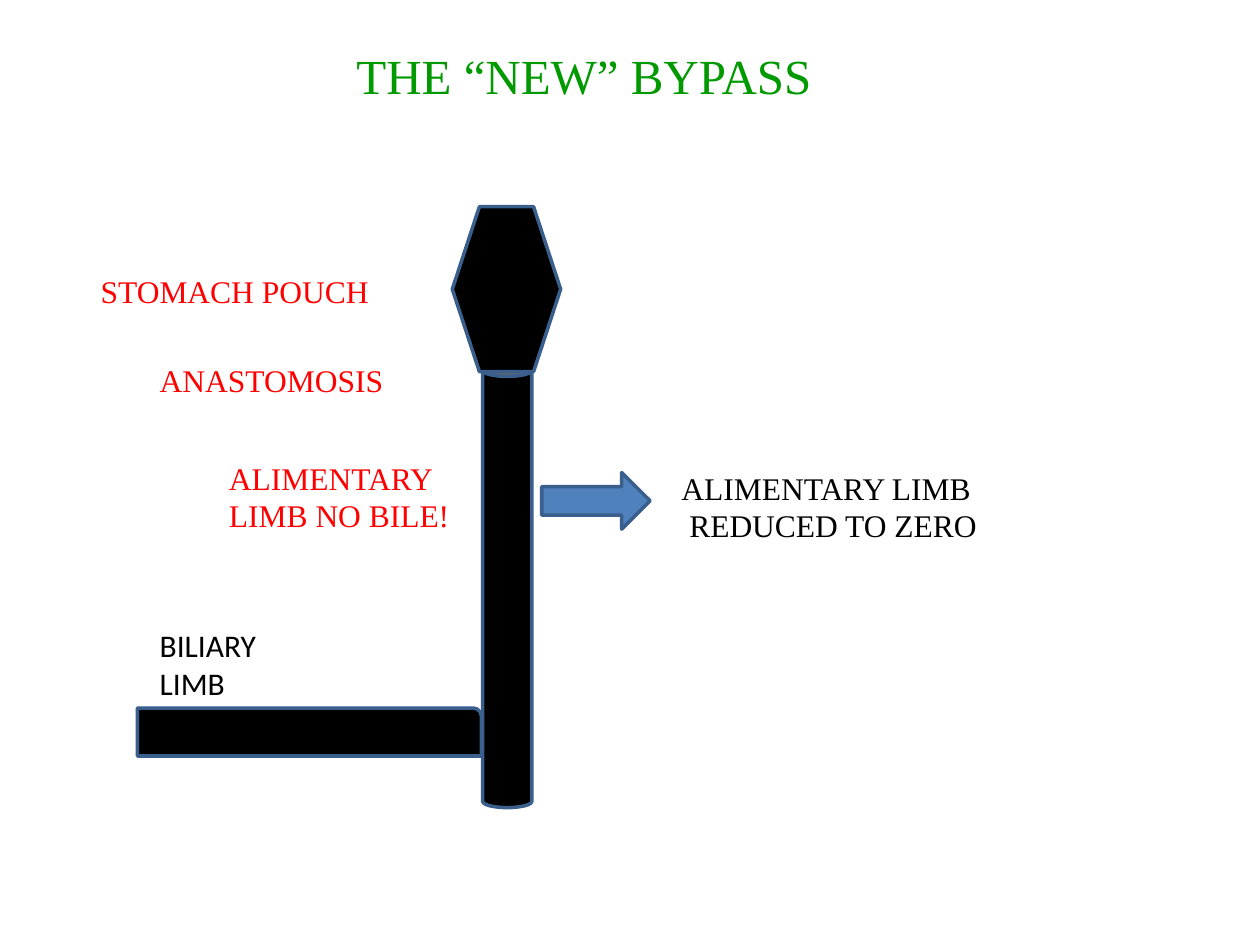
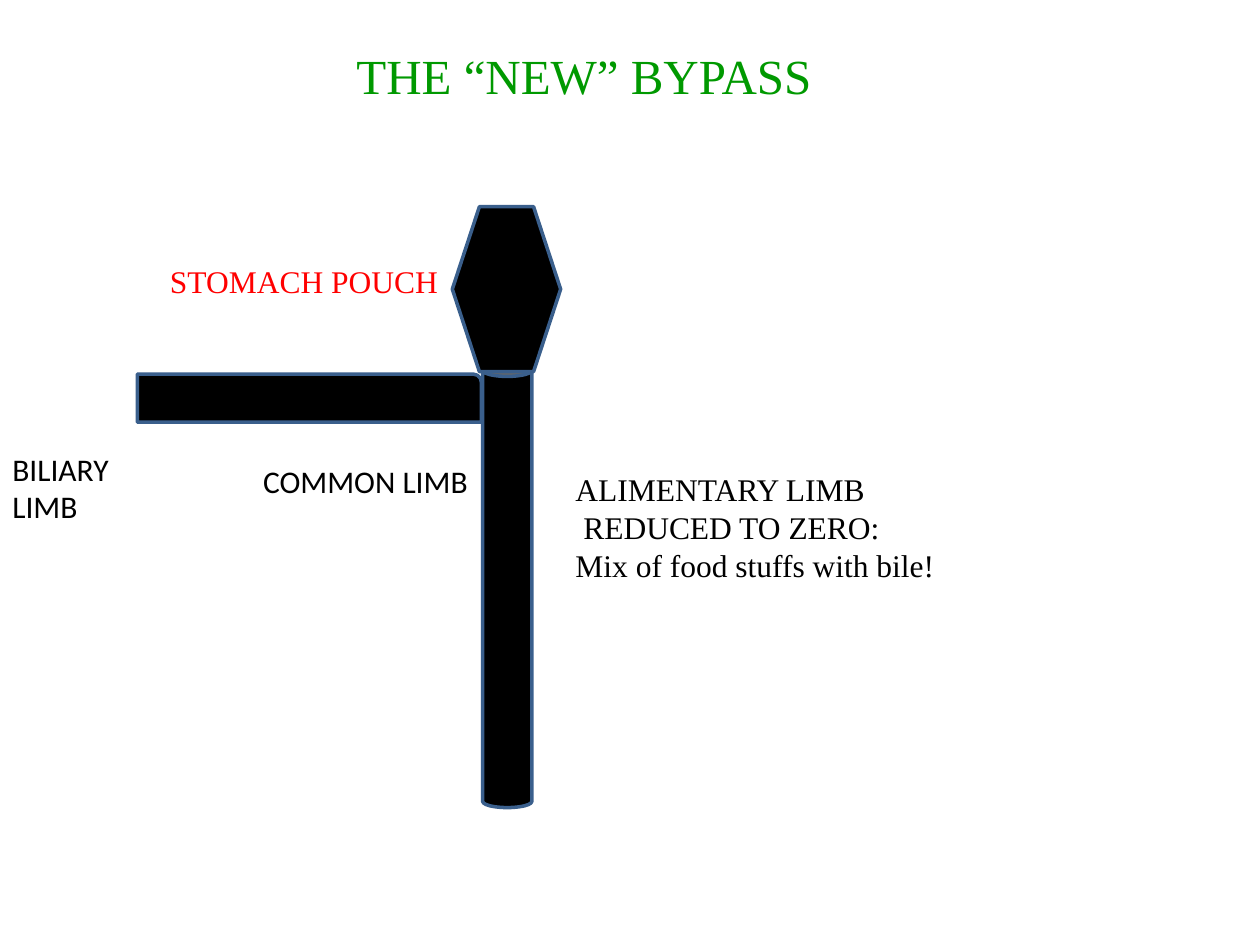
from dataclasses import dataclass

from pptx import Presentation
from pptx.dml.color import RGBColor
from pptx.enum.shapes import MSO_SHAPE
from pptx.enum.text import MSO_AUTO_SIZE
from pptx.util import Pt


@dataclass(frozen=True)
class Theme:
    title: str = "009900"
    label: str = "FF0000"
    ink: str = "000000"
    accent: str = "4F81BD"
    outline: str = "3A5F8C"
    serif: str = "Times New Roman"
    sans: str = "Calibri"
    title_size: int = 28
    body_size: int = 18
    line_width: int = 2
    line_pitch: float = 1.21
    inset: float = 3.6


T = Theme()
SLIDE_SIZE = (720, 540)

# Styles: font, size, colour
TITLE = (T.serif, T.title_size, T.title)
LABEL = (T.serif, T.body_size, T.label)
NOTE = (T.serif, T.body_size, T.ink)
LIMB = (T.sans, T.body_size, T.ink)

# Texts: lines, style, left, top, width, wraps
HEADING = (["THE “NEW” BYPASS"], TITLE, 196.6, 22.3, 277.2, False)

# Shapes: preset, fill, left, top, width, height
ALIMENTARY_LIMB = (MSO_SHAPE.CAN, T.ink, 275.8, 208.1, 28.1, 253.4)
STOMACH_POUCH = (MSO_SHAPE.HEXAGON, T.ink, 258.5, 118.1, 61.9, 94.3)
ARROW = (MSO_SHAPE.RIGHT_ARROW, T.accent, 309.6, 270, 61.9, 32.4)


def biliary_limb(top):
    return (MSO_SHAPE.ROUND_1_RECTANGLE, T.ink, 78.5, top, 196.6, 27.4)


SLIDES = [
    {
        "shapes": [ALIMENTARY_LIMB, STOMACH_POUCH, ARROW, biliary_limb(404.6)],
        "texts": [
            (["STOMACH POUCH"], LABEL, 50.4, 151.9, 169.2, False),
            (["ANASTOMOSIS"], LABEL, 84.2, 202.6, 143.3, False),
            (["ALIMENTARY", "LIMB NO BILE!"], LABEL, 123.8, 258.5, 141.8, False),
            (["ALIMENTARY LIMB", " REDUCED TO ZERO"], NOTE, 382.3, 264.2, 185.8, False),
            (["BILIARY", "LIMB"], LIMB, 84.2, 354.2, 360, True),
        ],
    },
    {
        "shapes": [ALIMENTARY_LIMB, STOMACH_POUCH, biliary_limb(213.8)],
        "texts": [
            (["STOMACH POUCH"], LABEL, 90, 146.2, 169.2, False),
            (["ALIMENTARY LIMB", " REDUCED TO ZERO:", "Mix of food stuffs with bile!"],
             NOTE, 321.8, 265, 226.1, False),
            (["BILIARY", "LIMB"], LIMB, 0, 253.4, 360, True),
            (["COMMON LIMB"], LIMB, 143.3, 260.6, 132.5, False),
        ],
    },
]


def add_part(s, preset, fill, *box):
    sp = s.shapes.add_shape(preset, *map(Pt, box))
    sp.shadow.inherit = False
    sp.fill.solid()
    sp.fill.fore_color.rgb = RGBColor.from_string(fill)
    sp.line.color.rgb = RGBColor.from_string(T.outline)
    sp.line.width = Pt(T.line_width)


def add_text(s, lines, style, left, top, width, wraps):
    """Place a text box whose height follows from its number of lines."""
    font, size, colour = style
    height = 2 * T.inset + T.line_pitch * size * len(lines)
    tf = s.shapes.add_textbox(Pt(left), Pt(top), Pt(width), Pt(height)).text_frame
    tf.word_wrap = wraps
    tf.auto_size = MSO_AUTO_SIZE.SHAPE_TO_FIT_TEXT
    tf.text = "\n".join(lines)
    for p in tf.paragraphs:
        for r in p.runs:
            r.font.name = font
            r.font.size = Pt(size)
            r.font.color.rgb = RGBColor.from_string(colour)


def main():
    prs = Presentation()
    prs.slide_width, prs.slide_height = map(Pt, SLIDE_SIZE)
    for content in SLIDES:
        s = prs.slides.add_slide(prs.slide_layouts[6])
        for part in content["shapes"]:
            add_part(s, *part)
        for text in [HEADING, *content["texts"]]:
            add_text(s, *text)
    prs.save("out.pptx")


if __name__ == "__main__":
    main()
